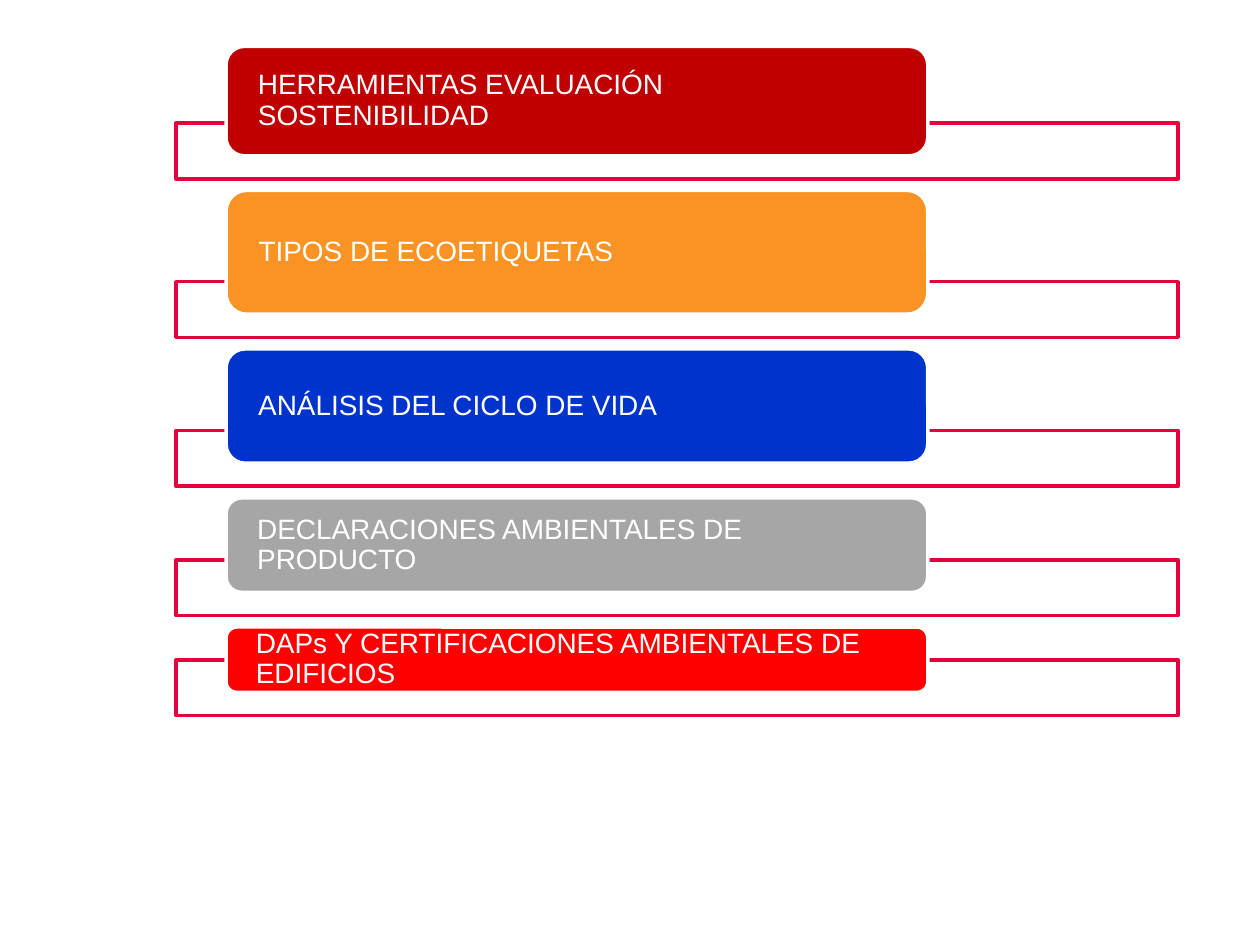
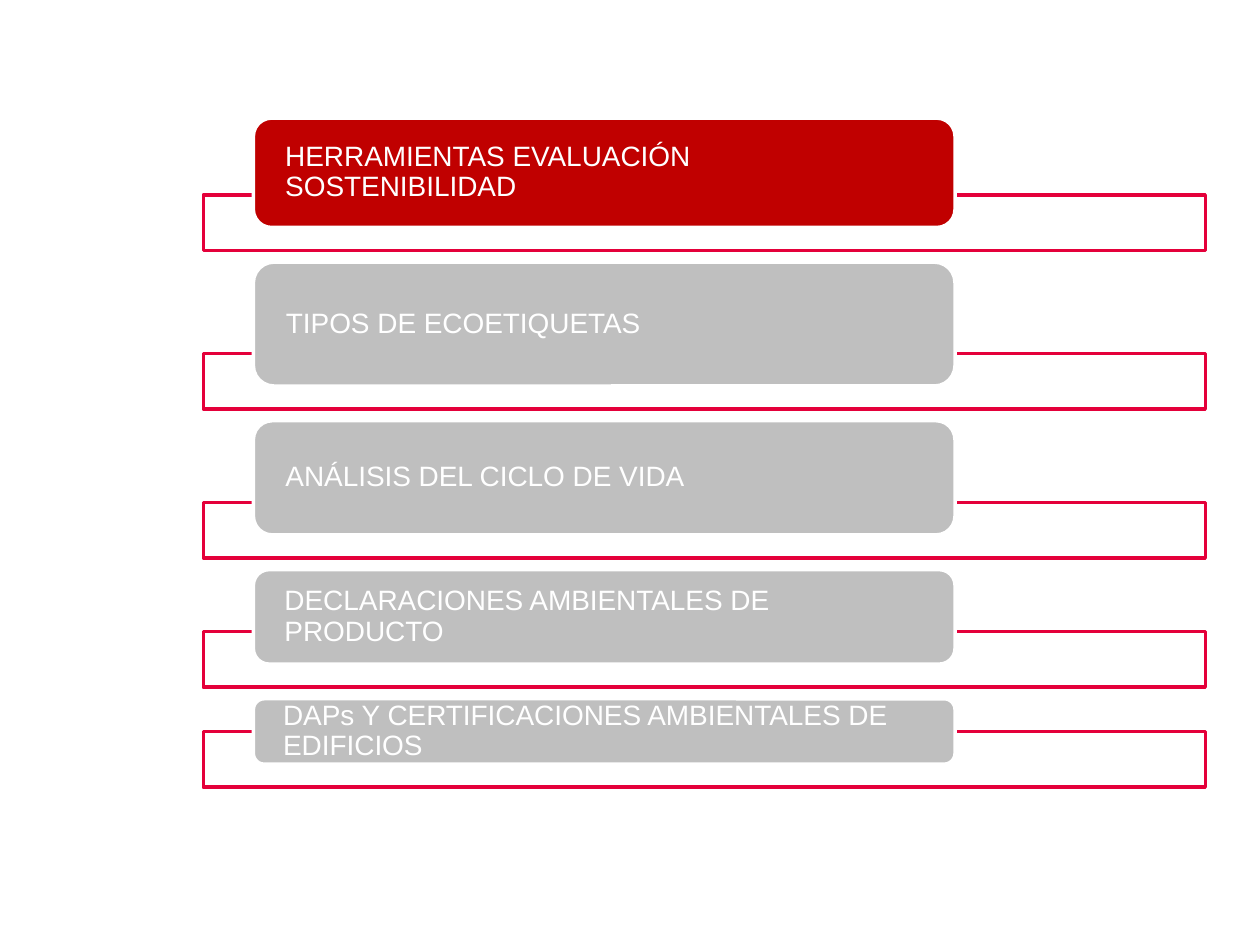
from lxml import etree
from pptx import Presentation
from pptx.dml.color import RGBColor
from pptx.enum import shapes, text
from pptx.oxml import ns
from pptx.util import Pt

WHITE = RGBColor(0xFF, 0xFF, 0xFF)
CRIMSON = RGBColor(0xE4, 0x00, 0x3A)
DARK_RED = RGBColor(0xC0, 0x00, 0x00)
ORANGE = RGBColor(0xF8, 0x93, 0x24)
BLUE = RGBColor(0x00, 0x33, 0xCC)
GREY = RGBColor(0xA6, 0xA6, 0xA6)
RED = RGBColor(0xFF, 0x00, 0x00)
MUTED = RGBColor(0xBF, 0xBF, 0xBF)

# Topic and height of its label
TOPICS = [
    ("HERRAMIENTAS EVALUACIÓN SOSTENIBILIDAD", 62.5),
    ("TIPOS DE ECOETIQUETAS", 70.8),
    ("ANÁLISIS DEL CICLO DE VIDA", 65.3),
    ("DECLARACIONES AMBIENTALES DE PRODUCTO", 54),
    ("DAPs Y CERTIFICACIONES AMBIENTALES DE EDIFICIOS", 37.4),
]

# Left and top of each agenda, and the colours of its labels
AGENDAS = [
    (100.6, 26.5, [DARK_RED, ORANGE, BLUE, GREY, RED]),
    (116.2, 67.5, [DARK_RED] + [MUTED] * 4),
]

STRIP_WIDTH, STRIP_HEIGHT = 572.6, 31.8
LABEL_WIDTH, LABEL_INDENT = 401, 28.6
LABEL_OVERLAP = 18.6
LABEL_GAP = 19.8
LABEL_MARGIN = 15.2


def add_box(slide, preset, left, top, width, height, fill, outline):
    box = slide.shapes.add_shape(preset, Pt(left), Pt(top), Pt(width), Pt(height))
    box.shadow.inherit = False
    box.fill.solid()
    box.fill.fore_color.rgb = fill
    box.line.color.rgb = outline
    box.line.width = Pt(2)
    return box


def add_strip(slide, left, top):
    strip = add_box(slide, shapes.MSO_SHAPE.RECTANGLE, left, top,
                    STRIP_WIDTH, STRIP_HEIGHT, WHITE, CRIMSON)
    colour = strip.fill._xPr.find(".//" + ns.qn("a:srgbClr"))
    etree.SubElement(colour, ns.qn("a:alpha"), val="90000")


def add_label(slide, topic, left, top, height, fill):
    label = add_box(slide, shapes.MSO_SHAPE.ROUNDED_RECTANGLE, left, top,
                    LABEL_WIDTH, height, fill, WHITE)
    frame = label.text_frame
    frame.word_wrap = True
    frame.vertical_anchor = text.MSO_ANCHOR.MIDDLE
    frame.margin_left = frame.margin_right = Pt(LABEL_MARGIN)
    frame.margin_top = frame.margin_bottom = 0
    paragraph = frame.paragraphs[0]
    paragraph.text = topic
    paragraph.alignment = text.PP_ALIGN.LEFT
    paragraph.line_spacing = 0.9
    paragraph.font.name = "Arial"
    paragraph.font.size = Pt(16)
    paragraph.font.color.rgb = WHITE


def add_agenda(slide, left, top, colours):
    for (topic, height), colour in zip(TOPICS, colours):
        add_strip(slide, left, top + height - LABEL_OVERLAP)
        add_label(slide, topic, left + LABEL_INDENT, top, height, colour)
        top += height + LABEL_GAP


def main():
    deck = Presentation()
    deck.slide_width, deck.slide_height = Pt(720), Pt(540)
    blank = deck.slide_layouts[6]
    for left, top, colours in AGENDAS:
        add_agenda(deck.slides.add_slide(blank), left, top, colours)
    deck.save("out.pptx")


if __name__ == "__main__":
    main()
